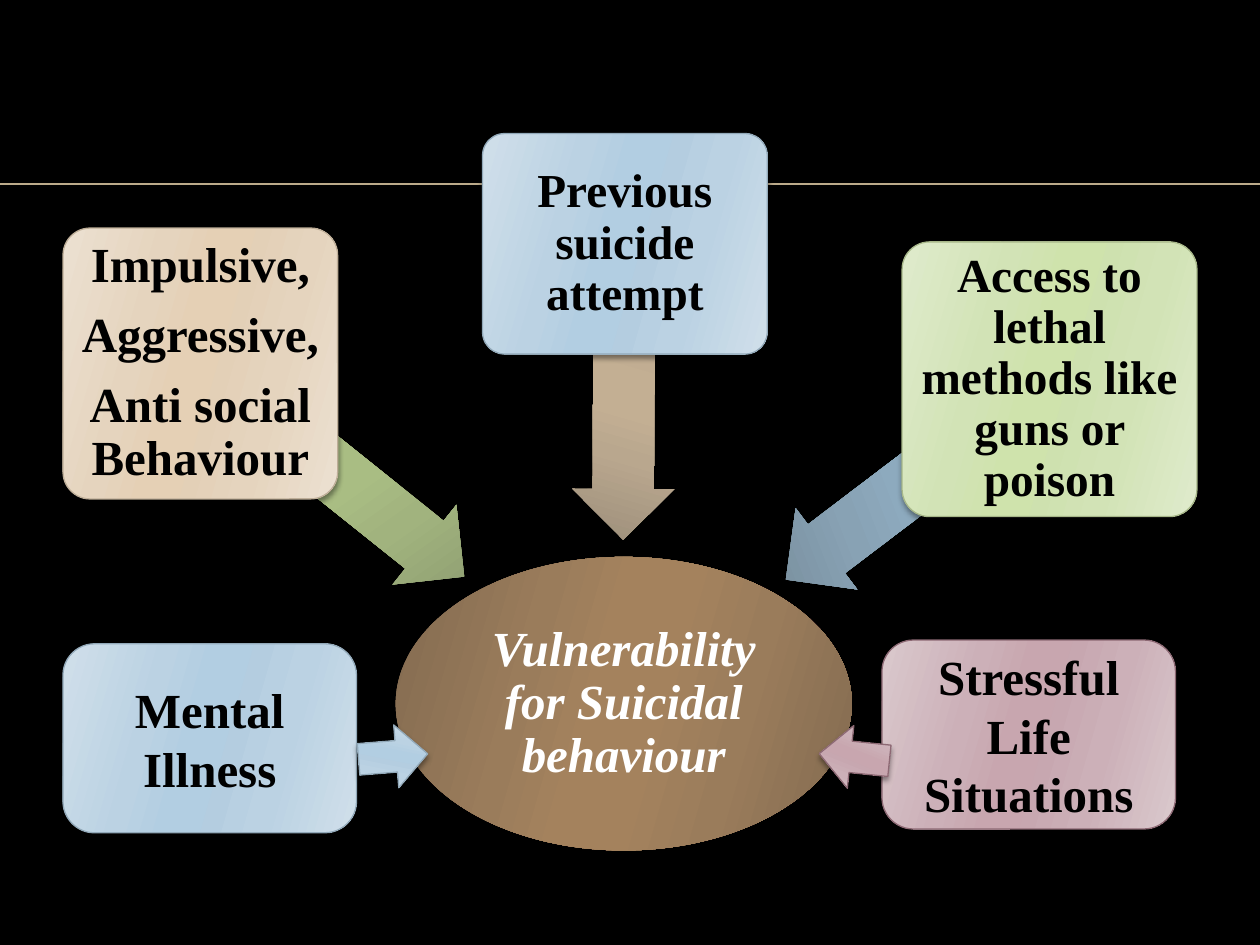
from lxml.etree import SubElement
from pptx import Presentation
from pptx.dml.color import RGBColor
from pptx.enum.shapes import MSO_CONNECTOR as Connector, MSO_SHAPE as Shape
from pptx.enum.text import MSO_ANCHOR as Anchor, PP_ALIGN as Align
from pptx.oxml.ns import qn
from pptx.util import Inches, Pt

FONT = "Times New Roman"
COLORS = {
    "background": "000000",
    "dark text": "000000",
    "light text": "FFFFFF",
    "shadow": "000000",
    "rule": "BBAA8A",
    "sand line": "BEAE98",
    "blue line": "92A9B9",
    "green line": "A7B789",
    "rose line": "8D6974",
}
# Each gradient runs edge, shade, centre, centre, shade, edge.
GRADIENTS = {
    "brown": ("826A50", "9A7C5B", "A4825D", "A4825D"),
    "sand": ("ECE0D1", "E5D4BE", "E5D0B5", "E3D0B7"),
    "blue": ("D0DFEA", "BBD2E3", "B2CEE2", "B4CDE0"),
    "green": ("DFEBCC", "D2E3B6", "CFE3AC", "CEE1AF"),
    "rose": ("DAC9CD", "CCB0B8", "C8A6AF", "C7A7B0"),
    "deep green": ("89986E", "A1B37E", "A9BD83", "A9BD83"),
    "deep sand": ("9D8F7B", "B9A78E", "C3AF93", "C3AF93"),
    "deep blue": ("768B99", "88A2B4", "8DAABE", "8DAABE"),
}
STOPS = (0, 30, 45, 55, 73, 100)
SOFT_SHADOW = (40, 3, 2)
STRONG_SHADOW = (57, 4.5, 3)


def rgb(name):
    return RGBColor.from_string(COLORS[name])


def fill_gradient(shape, name):
    edge, shade, left, right = GRADIENTS[name]
    shape.fill.gradient()
    shape.fill.gradient_angle = 360 - 16
    stop_list = shape._element.spPr.find(qn("a:gradFill")).find(qn("a:gsLst"))
    for stop in list(stop_list):
        stop_list.remove(stop)
    for position, color in zip(STOPS, (edge, shade, left, right, shade, edge)):
        stop = SubElement(stop_list, qn("a:gs"), pos=str(position * 1000))
        SubElement(stop, qn("a:srgbClr"), val=color)


def add_shadow(shape, opacity, blur, distance):
    """Drop a shadow straight down; blur and distance are in points."""
    shape.shadow.inherit = False
    effects = shape._element.spPr.find(qn("a:effectLst"))
    shadow = SubElement(effects, qn("a:outerShdw"), blurRad=str(Pt(blur)),
                        dist=str(Pt(distance)), dir="5400000", rotWithShape="0")
    color = SubElement(shadow, qn("a:srgbClr"), val=COLORS["shadow"])
    SubElement(color, qn("a:alpha"), val=str(opacity * 1000))


def add_block(slide, kind, box, gradient, line=None, rotation=0,
              adjustments=(), shadow=SOFT_SHADOW):
    shape = slide.shapes.add_shape(kind, *map(Inches, box))
    shape.rotation = rotation
    for index, value in enumerate(adjustments):
        shape.adjustments[index] = value
    fill_gradient(shape, gradient)
    if line:
        shape.line.color.rgb = rgb(line)
        shape.line.width = Pt(0.75)
    else:
        shape.line.fill.background()
    add_shadow(shape, *shadow)
    return shape


def set_text(shape, *lines, size=28, color="dark text", italic=False,
             spacing=0.9, after=0.35, inset=0.06):
    """Write centred bold paragraphs; after is a share of the text size."""
    frame = shape.text_frame
    frame.word_wrap = True
    frame.vertical_anchor = Anchor.MIDDLE
    if inset is not None:
        frame.margin_left = frame.margin_right = Inches(inset)
        frame.margin_top = frame.margin_bottom = Inches(inset)
    frame.text = "\n".join(lines)
    for paragraph in frame.paragraphs:
        paragraph.alignment = Align.CENTER
        paragraph.line_spacing = spacing
        paragraph.space_after = Pt(after * size)
        font = paragraph.runs[0].font
        font.name, font.size = FONT, Pt(size)
        font.bold, font.italic = True, italic
        font.color.rgb = rgb(color)


def add_rule(slide):
    rule = slide.shapes.add_connector(
        Connector.STRAIGHT, 0, Inches(1.46), Inches(10), Inches(1.46))
    rule.line.color.rgb = rgb("rule")
    rule.line.width = Pt(1)
    SubElement(rule._element.spPr, qn("a:effectLst"))


def add_outcome(slide):
    ellipse = add_block(slide, Shape.OVAL, (3.14, 4.42, 3.62, 2.33), "brown",
                        shadow=STRONG_SHADOW)
    set_text(ellipse, "Vulnerability for Suicidal behaviour",
             color="light text", italic=True, inset=0.02)


def add_upper_factors(slide):
    factors = [
        ("sand", (0.5, 1.81, 2.18, 2.15), 28,
         ("Impulsive,", "Aggressive,", "Anti social Behaviour"),
         "deep green", (1.29, 3.33, 2.69, 0.81), 218.7),
        ("blue", (3.83, 1.06, 2.26, 1.75), 27, ("Previous suicide attempt",),
         "deep sand", (3.78, 2.71, 2.34, 0.81), 270.2),
        ("green", (7.16, 1.92, 2.34, 2.18), 27,
         ("Access to lethal methods like guns or poison",),
         "deep blue", (5.97, 3.4, 2.63, 0.81), 322.8),
    ]
    for color, box, size, lines, arrow_color, arrow_box, rotation in factors:
        add_block(slide, Shape.LEFT_ARROW, arrow_box, arrow_color,
                  rotation=rotation, adjustments=(0.6, 0.5),
                  shadow=STRONG_SHADOW)
        card = add_block(slide, Shape.ROUNDED_RECTANGLE, box, color,
                         f"{color} line", adjustments=(0.1,))
        set_text(card, *lines, size=size)


def add_lower_factors(slide):
    factors = [
        ("rose", (7, 5.08, 2.33, 1.5), "Stressful Life Situations",
         Shape.DOWN_ARROW, (6.53, 5.73, 0.5, 0.56), 95.9),
        ("blue", (0.5, 5.11, 2.33, 1.5), "Mental Illness",
         Shape.UP_ARROW, (2.87, 5.73, 0.5, 0.55), 85.4),
    ]
    for color, box, text, arrow, arrow_box, rotation in factors:
        card = add_block(slide, Shape.ROUNDED_RECTANGLE, box, color,
                         f"{color} line")
        set_text(card, text, spacing=1.0, after=0, inset=None)
        add_block(slide, arrow, arrow_box, color, f"{color} line", rotation)


def main():
    presentation = Presentation()
    presentation.slide_width = Inches(10)
    presentation.slide_height = Inches(7.5)
    slide = presentation.slides.add_slide(presentation.slide_layouts[6])
    slide.background.fill.solid()
    slide.background.fill.fore_color.rgb = rgb("background")
    add_rule(slide)
    add_outcome(slide)
    add_upper_factors(slide)
    add_lower_factors(slide)
    presentation.save("out.pptx")


if __name__ == "__main__":
    main()
